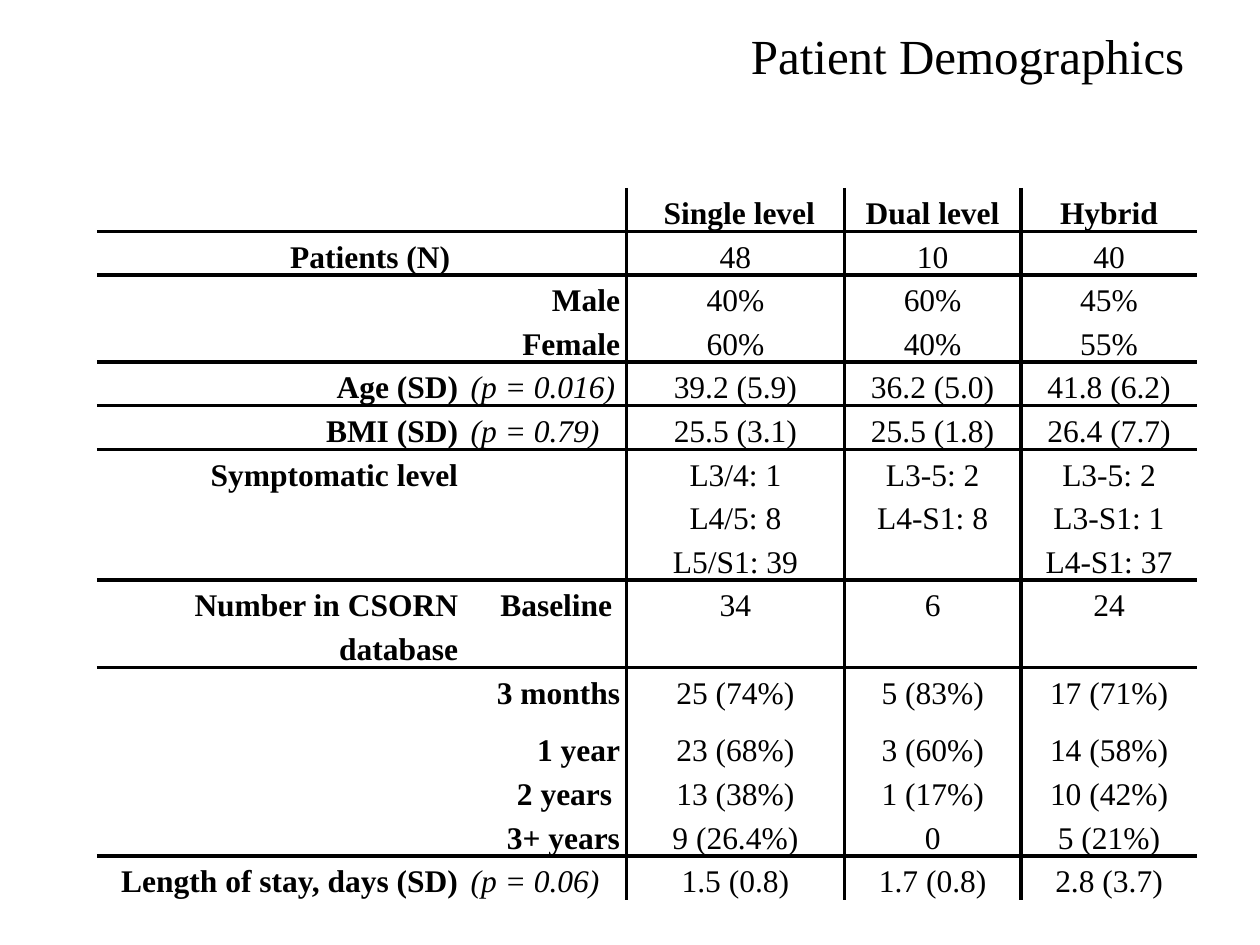
from pptx import Presentation
from pptx.dml.color import RGBColor
from pptx.enum.text import MSO_ANCHOR, PP_ALIGN
from pptx.oxml.ns import qn
from pptx.util import Pt
from lxml import etree

BLACK = RGBColor(0, 0, 0)
FONT = "Times New Roman"
LEFT, CENTER, RIGHT = PP_ALIGN.LEFT, PP_ALIGN.CENTER, PP_ALIGN.RIGHT
MIDDLE = MSO_ANCHOR.MIDDLE

COL_WIDTHS = [210, 92.6, 124.6, 100.8, 100.8]
SMALL, MEDIUM, TALL = 10.8, 21.6, 33.1  # minimum row heights; text stretches them

# Row height, line below the row, cell texts
ROWS = [
    (SMALL, True, ["", "", " Single level", "Dual level", "Hybrid"]),
    (SMALL, True, ["Patients (N) ", "", "48", "10", "40"]),
    (SMALL, False, ["", "Male", "40%", "60%", "45%"]),
    (MEDIUM, True, ["", "Female", "60%", "40%", "55%"]),
    (SMALL, True, ["Age (SD)", "(p = 0.016)", "39.2 (5.9)", "36.2 (5.0)", "41.8 (6.2)"]),
    (SMALL, True, ["BMI (SD)", "(p = 0.79)", "25.5 (3.1)", "25.5 (1.8)", "26.4 (7.7)"]),
    (SMALL, True, ["Symptomatic level", "", "L3/4: 1\nL4/5: 8\nL5/S1: 39",
                   "L3-5: 2\nL4-S1: 8", "L3-5: 2\nL3-S1: 1\nL4-S1: 37"]),
    (MEDIUM, True, ["Number in CSORN database", "Baseline ", "34", "6", "24"]),
    (TALL, False, ["", "3 months", "25 (74%)", "5 (83%)", "17 (71%)"]),
    (MEDIUM, False, ["", "1 year", "23 (68%)", "3 (60%)", "14 (58%)"]),
    (MEDIUM, False, ["", "2 years ", "13 (38%)", "1 (17%)", "10 (42%)"]),
    (MEDIUM, True, ["", "3+ years", "9 (26.4%)", "0", "5 (21%)"]),
    (SMALL, False, ["Length of stay, days (SD)", "(p = 0.06)", "1.5 (0.8)", "1.7 (0.8)", "2.8 (3.7)"]),
]


def style_font(font, size, bold=False, italic=False):
    font.name = FONT
    font.size = Pt(size)
    font.bold = bold
    font.italic = italic
    font.color.rgb = BLACK


def add_title(s, text):
    title = s.shapes.title
    title.left, title.top, title.width, title.height = Pt(214), Pt(0), Pt(470), Pt(62.6)
    tf = title.text_frame
    tf.text = text
    tf.vertical_anchor = MIDDLE
    p = tf.paragraphs[0]
    p.alignment = RIGHT
    style_font(p.runs[0].font, 28)


def set_borders(cell, left, right, top, bottom):
    """Draw the given edges in black and hide the others."""
    tcPr = cell._tc.get_or_add_tcPr()
    for tag, shown in (("a:lnL", left), ("a:lnR", right), ("a:lnT", top), ("a:lnB", bottom)):
        ln = etree.SubElement(tcPr, qn(tag), w=str(Pt(2.25)))
        if shown:
            fill = etree.SubElement(ln, qn("a:solidFill"))
            etree.SubElement(fill, qn("a:srgbClr"), val=str(BLACK))
        else:
            etree.SubElement(ln, qn("a:noFill"))


def fill_cell(cell, text, row, col):
    cell.margin_left = cell.margin_right = Pt(3.6)
    cell.margin_top = cell.margin_bottom = Pt(0)
    if not text:
        return
    p_value = text.startswith("(p")
    label = row == 0 or (col < 2 and not p_value)
    cell.text = text
    for p in cell.text_frame.paragraphs:
        p.alignment = LEFT if p_value else RIGHT if col < 2 else CENTER
        p.line_spacing = 1.25
        p.space_after = Pt(0 if p_value or "\n" in text else 8)
        for r in p.runs:
            style_font(r.font, 18, label, p_value)


def add_demographics_table(s):
    frame = s.shapes.add_table(len(ROWS), len(COL_WIDTHS), Pt(55.4), Pt(107.3),
                               Pt(sum(COL_WIDTHS)), Pt(407.5))
    table = frame.table
    table.first_row = table.horz_banding = False
    for column, width in zip(table.columns, COL_WIDTHS):
        column.width = Pt(width)
    last = len(COL_WIDTHS) - 1
    line_above = False
    for i, (height, line_below, texts) in enumerate(ROWS):
        table.rows[i].height = Pt(height)
        for j, text in enumerate(texts):
            cell = table.cell(i, j)
            fill_cell(cell, text, i, j)
            # Vertical rules divide the labels and the three groups
            set_borders(cell, j > 1, 0 < j < last, line_above, line_below)
            cell.fill.background()
        line_above = line_below


def main():
    prs = Presentation()
    prs.slide_width, prs.slide_height = Pt(720), Pt(540)
    s = prs.slides.add_slide(prs.slide_layouts[5])
    add_title(s, "Patient Demographics")
    add_demographics_table(s)
    prs.save("out.pptx")


if __name__ == "__main__":
    main()
